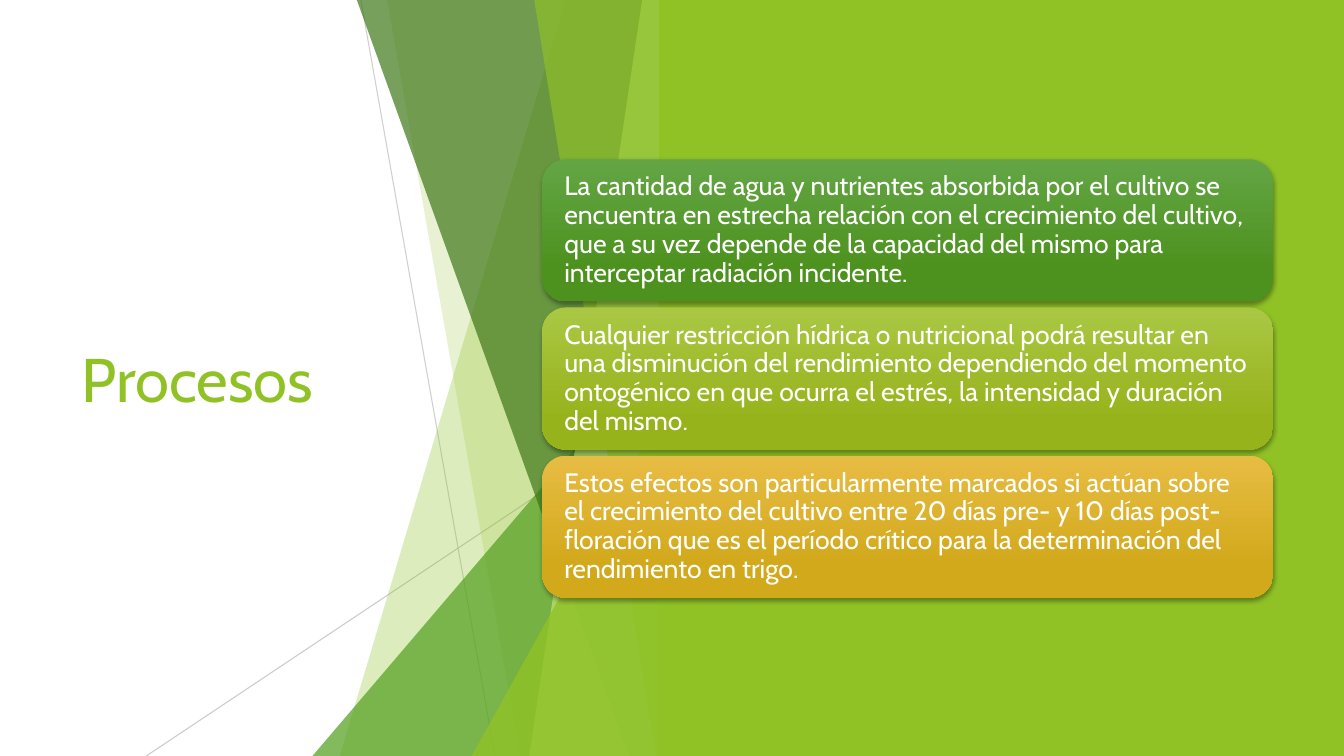
from lxml.etree import SubElement
from pptx import Presentation
from pptx.dml.color import RGBColor
from pptx.enum.shapes import MSO_CONNECTOR as Connector, MSO_SHAPE as Shape
from pptx.enum.text import MSO_ANCHOR as Anchor
from pptx.oxml.ns import qn
from pptx.util import Inches, Pt

LIME = RGBColor(0x90, 0xC2, 0x26)
GREEN = RGBColor(0x54, 0xA0, 0x21)
FOREST = RGBColor(0x3F, 0x78, 0x19)
PALE = RGBColor(0xC0, 0xE4, 0x74)
GREY = RGBColor(0xBF, 0xBF, 0xBF)
WHITE = RGBColor(0xFF, 0xFF, 0xFF)
BLACK = RGBColor(0, 0, 0)
GREEN_TOP, GREEN_BASE = RGBColor(0x63, 0xA5, 0x45), RGBColor(0x4D, 0x92, 0x1E)
OLIVE_TOP, OLIVE_BASE = RGBColor(0xAA, 0xC7, 0x44), RGBColor(0x97, 0xB3, 0x1C)
GOLD_TOP, GOLD_BASE = RGBColor(0xE7, 0xBC, 0x43), RGBColor(0xD2, 0xA9, 0x1B)

deck = Presentation()
deck.slide_width, deck.slide_height = Inches(13.33), Inches(7.5)
COL, ROW = deck.slide_width / 100, deck.slide_height / 100
slide = deck.slides.add_slide(deck.slide_layouts[6])
shapes = slide.shapes


def write(frame, text, size, color, line_spacing=1.0, inset=0.1):
    frame.word_wrap = True
    frame.vertical_anchor = Anchor.MIDDLE
    frame.margin_left = frame.margin_right = Inches(inset)
    paragraph = frame.paragraphs[0]
    paragraph.text = text
    paragraph.line_spacing = line_spacing
    font = paragraph.runs[0].font
    font.name, font.size, font.color.rgb = "Cabin", Pt(size), color


def set_opacity(element, percent):
    color = next(element.iter(qn("a:srgbClr")))
    SubElement(color, qn("a:alpha"), val=str(percent * 1000))


title = shapes.add_textbox(
    int(5.33 * COL), int(20.13 * ROW), int(29.1 * COL), int(59.7 * ROW))
write(title.text_frame, "Procesos", 44, LIME)

FOLD = 49.95
RAYS = [(26.85, 0, 36.83, 75), (FOLD, 53.7, 10.88, 80)]
for start, top, end, opacity in RAYS:
    ray = shapes.add_connector(
        Connector.STRAIGHT, int(start * COL), int(top * ROW),
        int(end * COL), deck.slide_height)
    ray.line.color.rgb = GREY
    ray.line.width = Pt(0.75)
    set_opacity(ray.line._get_or_add_ln(), opacity)
    SubElement(ray._element.spPr, qn("a:effectLst"))

FACETS = [
    (42.08, 0, 25.28, LIME, 30),
    (28.8, 0, 38.7, LIME, 20),
    (FOLD, 44.4, 23.25, GREEN, 72),
    (26.55, 0, 46.8, FOREST, 70),
    (47.78, 0, 39.38, PALE, 70),
    (39.75, 0, 48.83, LIME, 65),
    (FOLD, 52.4, 35.1, LIME, 80),
]
for apex, top, base, color, opacity in FACETS:
    if apex == FOLD:
        facet = shapes.add_shape(
            Shape.ISOSCELES_TRIANGLE, int(base * COL), int(top * ROW),
            int((FOLD - base) * COL), int((100 - top) * ROW))
        facet.adjustments[0] = 1
    else:
        outline = shapes.build_freeform(int(apex * COL), 0)
        outline.add_line_segments([
            (int(FOLD * COL), 0),
            (int(FOLD * COL), deck.slide_height),
            (int(base * COL), deck.slide_height)])
        facet = outline.convert_to_shape()
    facet.fill.solid()
    facet.fill.fore_color.rgb = color
    set_opacity(facet._element.spPr, opacity)
    facet.line.fill.background()
    facet.shadow.inherit = False

PANEL = 49.05
panel = shapes.add_shape(
    Shape.RECTANGLE, int(PANEL * COL), 0, int((100 - PANEL) * COL), deck.slide_height)
panel.fill.solid()
panel.fill.fore_color.rgb = LIME
panel.line.fill.background()
panel.shadow.inherit = False

PROCESSES = [
    ("La cantidad de agua y nutrientes absorbida por el cultivo se encuentra en "
     "estrecha relación con el crecimiento del cultivo, que a su vez depende de la "
     "capacidad del mismo para interceptar radiación incidente.",
     GREEN_TOP, GREEN_BASE),
    ("Cualquier restricción hídrica o nutricional podrá resultar en una disminución "
     "del rendimiento dependiendo del momento ontogénico en que ocurra el estrés, "
     "la intensidad y duración del mismo.",
     OLIVE_TOP, OLIVE_BASE),
    ("Estos efectos son particularmente marcados si actúan sobre el crecimiento del "
     "cultivo entre 20 días pre- y 10 días post-floración que es el período crítico "
     "para la determinación del rendimiento en trigo.",
     GOLD_TOP, GOLD_BASE),
]
for index, (process, light, dark) in enumerate(PROCESSES):
    card = shapes.add_shape(
        Shape.ROUNDED_RECTANGLE, int(40.35 * COL), int((21.07 + 19.6 * index) * ROW),
        int(54.38 * COL), int(18.8 * ROW))
    card.fill.gradient()
    card.fill.gradient_angle = 270
    for stop, position, color in zip(card.fill.gradient_stops, (0, 0.78), (light, dark)):
        stop.position = position
        stop.color.rgb = color
    card.line.fill.background()
    card.shadow.inherit = False
    effects = card._element.spPr.find(qn("a:effectLst"))
    shadow = SubElement(
        effects, qn("a:outerShdw"), blurRad=str(Pt(3)), dist=str(Pt(2)),
        dir="5400000", rotWithShape="0")
    SubElement(shadow, qn("a:srgbClr"), val=str(BLACK))
    set_opacity(shadow, 35)
    write(card.text_frame, process, 19, WHITE, line_spacing=0.9, inset=0.15)
    card.text_frame.paragraphs[0].alignment = 1

deck.save("out.pptx")
